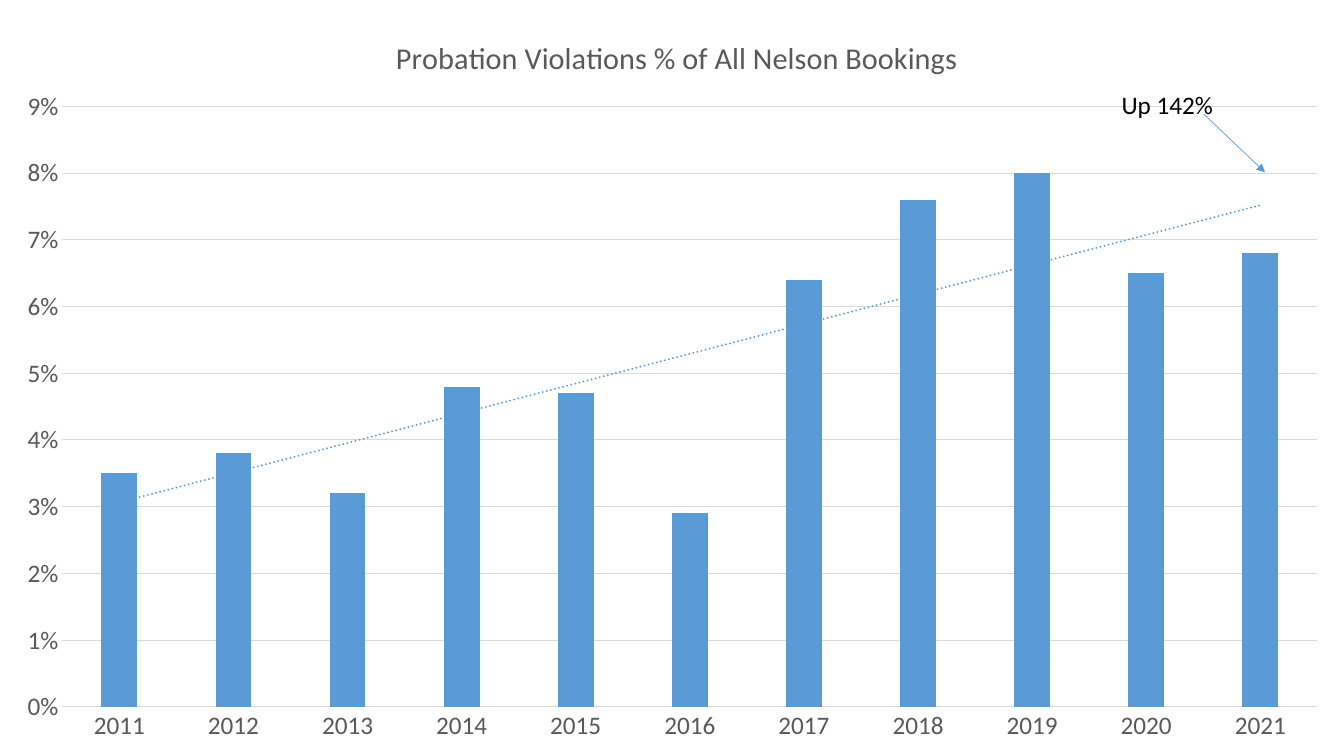
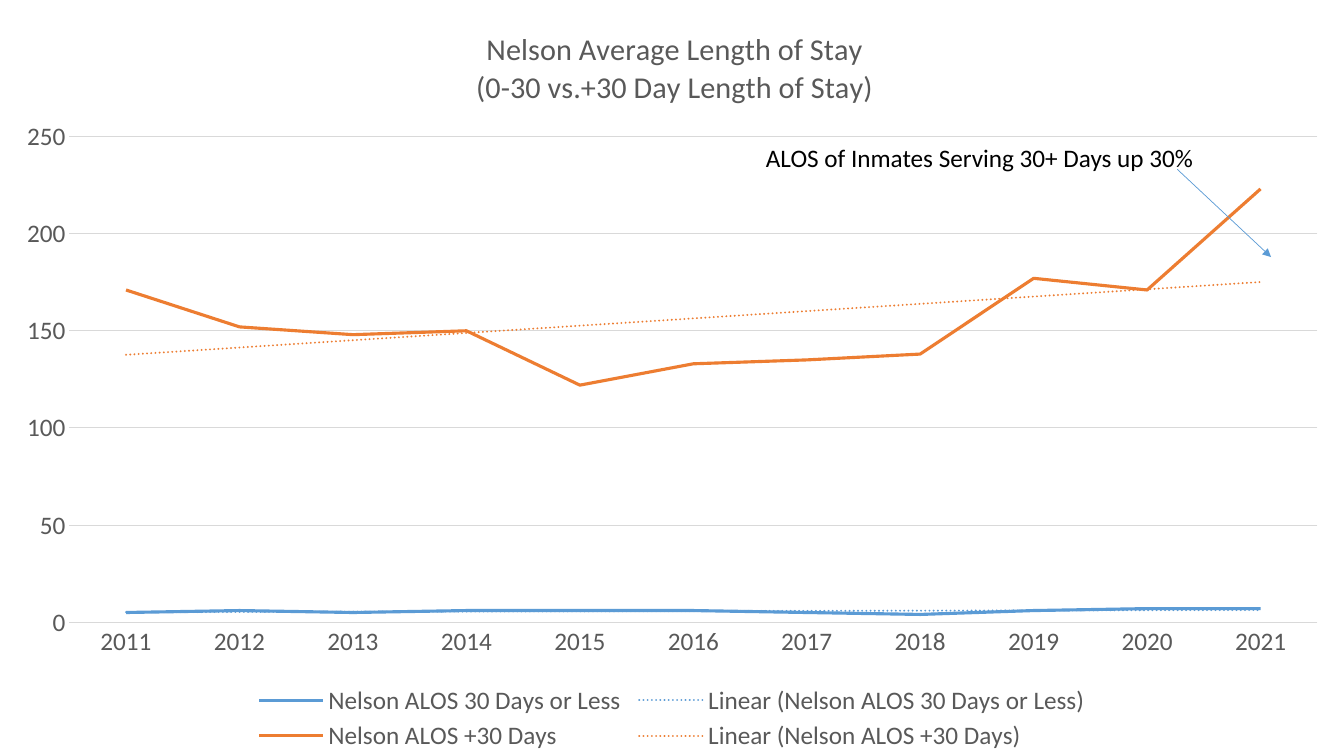
"""Builds two jail trend chart slides with callouts."""
from dataclasses import dataclass

from lxml import etree
from pptx import Presentation
from pptx.chart.chart import Chart
from pptx.chart.data import CategoryChartData
from pptx.dml.color import RGBColor
from pptx.enum.chart import XL_CHART_TYPE, XL_LEGEND_POSITION, XL_MARKER_STYLE, XL_TICK_MARK
from pptx.enum.shapes import MSO_CONNECTOR
from pptx.enum.text import MSO_AUTO_SIZE
from pptx.oxml import parse_xml
from pptx.oxml.ns import nsdecls, qn
from pptx.slide import Slide
from pptx.util import Pt

BARS = XL_CHART_TYPE.COLUMN_CLUSTERED
LINES = XL_CHART_TYPE.LINE
BOTTOM = XL_LEGEND_POSITION.BOTTOM
BARE = XL_MARKER_STYLE.NONE
NO_TICK = XL_TICK_MARK.NONE
STRAIGHT = MSO_CONNECTOR.STRAIGHT
GROW = MSO_AUTO_SIZE.SHAPE_TO_FIT_TEXT

WIDE, HIGH = 960, 540
YEARS = [str(year) for year in range(2011, 2022)]


@dataclass(frozen=True)
class Theme:
    font: str = "Calibri"
    blue: str = "5B9BD5"
    orange: str = "ED7D31"
    gray: str = "595959"
    grid: str = "D9D9D9"
    black: str = "000000"
    title: float = 21.6
    body: float = 18
    hair: float = 0.75
    trend: float = 1.5
    line: float = 2.25
    arrow: float = 0.5


@dataclass(frozen=True)
class Trend:
    name: str
    values: tuple[float, ...]
    color: str


@dataclass(frozen=True)
class Note:
    text: str
    box: tuple[float, float, float, float]
    start: tuple[float, float]
    end: tuple[float, float]


@dataclass(frozen=True)
class Page:
    title: str
    kind: XL_CHART_TYPE
    trends: tuple[Trend, ...]
    scale: dict[str, float]
    digits: str
    head: tuple[float, ...]
    plot: tuple[float, ...]
    note: Note


THEME = Theme()

PAGES = (
    Page(
        "Probation Violations % of All Nelson Bookings", BARS,
        (Trend("Series 1", (0.035, 0.038, 0.032, 0.048, 0.047, 0.029,
                            0.064, 0.076, 0.08, 0.065, 0.068), THEME.blue),),
        {"minimum_scale": 0, "maximum_scale": 0.09, "major_unit": 0.01}, "0%",
        (279, 22), (44.5, 76, 896.5, 429),
        Note("Up 142%", (794, 60.5, 80.6, 28.8), (859.7, 81.4), (903.6, 123.1)),
    ),
    Page(
        "Nelson Average Length of Stay\n(0-30 vs.+30 Day Length of Stay)", LINES,
        (Trend("Nelson ALOS 30 Days or Less",
               (5, 6, 5, 6, 6, 6, 5, 4, 6, 7, 7), THEME.blue),
         Trend("Nelson ALOS +30 Days",
               (171, 152, 148, 150, 122, 133, 135, 138, 177, 171, 223), THEME.orange)),
        {"minimum_scale": 0, "maximum_scale": 250, "major_unit": 50}, "General",
        (338, 18.5), (49.5, 97.5, 891.5, 347),
        Note("ALOS of Inmates Serving 30+ Days up 30%", (540, 98, 323.3, 28.8),
             (841, 121), (907.9, 183.6)),
    ),
)
LEGEND = (178, 486, 604, 54)


def style(font, size: float, color: str) -> None:
    """Sets the face, size and colour of a font."""
    for key, value in {"name": THEME.font, "size": Pt(size), "bold": False}.items():
        setattr(font, key, value)
    font.color.rgb = RGBColor.from_string(color)


def stroke(line, color: str, width: float) -> None:
    """Sets the colour and width of a line."""
    line.color.rgb = RGBColor.from_string(color)
    line.width = Pt(width)


def place(part: etree.ElementBase, index: int, box: tuple[float, ...], inner: bool = False) -> None:
    """Pins a chart part to a box given in points."""
    for old in part.findall(qn("c:layout")):
        part.remove(old)
    target = '<c:layoutTarget val="inner"/>' if inner else ""
    modes = '<c:xMode val="edge"/><c:yMode val="edge"/>'
    sides = "".join(
        f'<c:{key} val="{value / full:.4f}"/>'
        for key, value, full in zip("xywh", box, (WIDE, HIGH, WIDE, HIGH))
    )
    part.insert(index, parse_xml(
        f'<c:layout {nsdecls("c")}><c:manualLayout>{target}{modes}{sides}'
        "</c:manualLayout></c:layout>"))


def add_trend(series, color: str) -> None:
    """Adds a dotted linear trend line to a series."""
    series._element.find(qn("c:cat")).addprevious(parse_xml(
        f'<c:trendline {nsdecls("c", "a")}><c:spPr>'
        f'<a:ln w="{Pt(THEME.trend)}" cap="rnd"><a:solidFill><a:srgbClr val="{color}"/>'
        '</a:solidFill><a:prstDash val="sysDot"/></a:ln></c:spPr>'
        '<c:trendlineType val="linear"/><c:dispRSqr val="0"/><c:dispEq val="0"/>'
        "</c:trendline>"))


def set_axes(chart: Chart, page: Page) -> None:
    """Formats both axes and the grid."""
    years, amount = chart.category_axis, chart.value_axis
    for axis in (years, amount):
        axis.major_tick_mark = axis.minor_tick_mark = NO_TICK
        style(axis.tick_labels.font, THEME.body, THEME.gray)
    stroke(years.format.line, THEME.grid, THEME.hair)
    amount.format.line.fill.background()
    stroke(amount.major_gridlines.format.line, THEME.grid, THEME.hair)
    for key, value in page.scale.items():
        setattr(amount, key, value)
    amount.tick_labels.number_format = page.digits
    amount.tick_labels.number_format_is_linked = False


def set_plot(chart: Chart, page: Page) -> None:
    """Colours the series and adds their trend lines."""
    plot = chart.plots[0]
    plot.vary_by_categories = False
    if page.kind == BARS:
        for key, value in {"gap_width": 219, "overlap": -27}.items():
            setattr(plot, key, value)
    for series, trend in zip(plot.series, page.trends):
        if page.kind == BARS:
            series.format.fill.solid()
            series.format.fill.fore_color.rgb = RGBColor.from_string(trend.color)
        else:
            stroke(series.format.line, trend.color, THEME.line)
            series.marker.style = BARE
            series.smooth = False
        add_trend(series, trend.color)


def add_chart(slide: Slide, page: Page) -> None:
    """Draws the chart that fills a slide."""
    data = CategoryChartData()
    data.categories = YEARS
    for trend in page.trends:
        data.add_series(trend.name, trend.values)
    chart = slide.shapes.add_chart(page.kind, 0, 0, Pt(WIDE), Pt(HIGH), data).chart
    style(chart.font, THEME.body, THEME.black)
    frame = chart.chart_title.text_frame
    frame.text = page.title
    for para in frame.paragraphs:
        style(para.runs[0].font, THEME.title, THEME.gray)
    set_axes(chart, page)
    set_plot(chart, page)
    root = chart.element
    place(root.find(".//" + qn("c:title")), 1, page.head)
    place(root.find(".//" + qn("c:plotArea")), 0, page.plot, True)
    chart.has_legend = len(page.trends) > 1
    if chart.has_legend:
        chart.legend.position = BOTTOM
        chart.legend.include_in_layout = False
        style(chart.legend.font, THEME.body, THEME.gray)
        place(root.find(".//" + qn("c:legend")), 1, LEGEND)


def add_note(slide: Slide, note: Note) -> None:
    """Draws a callout with its arrow."""
    frame = slide.shapes.add_textbox(*map(Pt, note.box)).text_frame
    for key, value in {"word_wrap": False, "auto_size": GROW, "text": note.text}.items():
        setattr(frame, key, value)
    style(frame.paragraphs[0].runs[0].font, THEME.body, THEME.black)
    arrow = slide.shapes.add_connector(STRAIGHT, *map(Pt, note.start + note.end))
    stroke(arrow.line, THEME.blue, THEME.arrow)
    props = arrow.element.spPr
    etree.SubElement(props.find(qn("a:ln")), qn("a:tailEnd"), type="triangle")
    etree.SubElement(props, qn("a:effectLst"))


def main() -> None:
    """Builds and saves the deck."""
    deck = Presentation()
    deck.slide_width, deck.slide_height = Pt(WIDE), Pt(HIGH)
    for page in PAGES:
        slide = deck.slides.add_slide(deck.slide_layouts[6])
        add_chart(slide, page)
        add_note(slide, page.note)
    deck.save("out.pptx")


if __name__ == "__main__":
    main()
